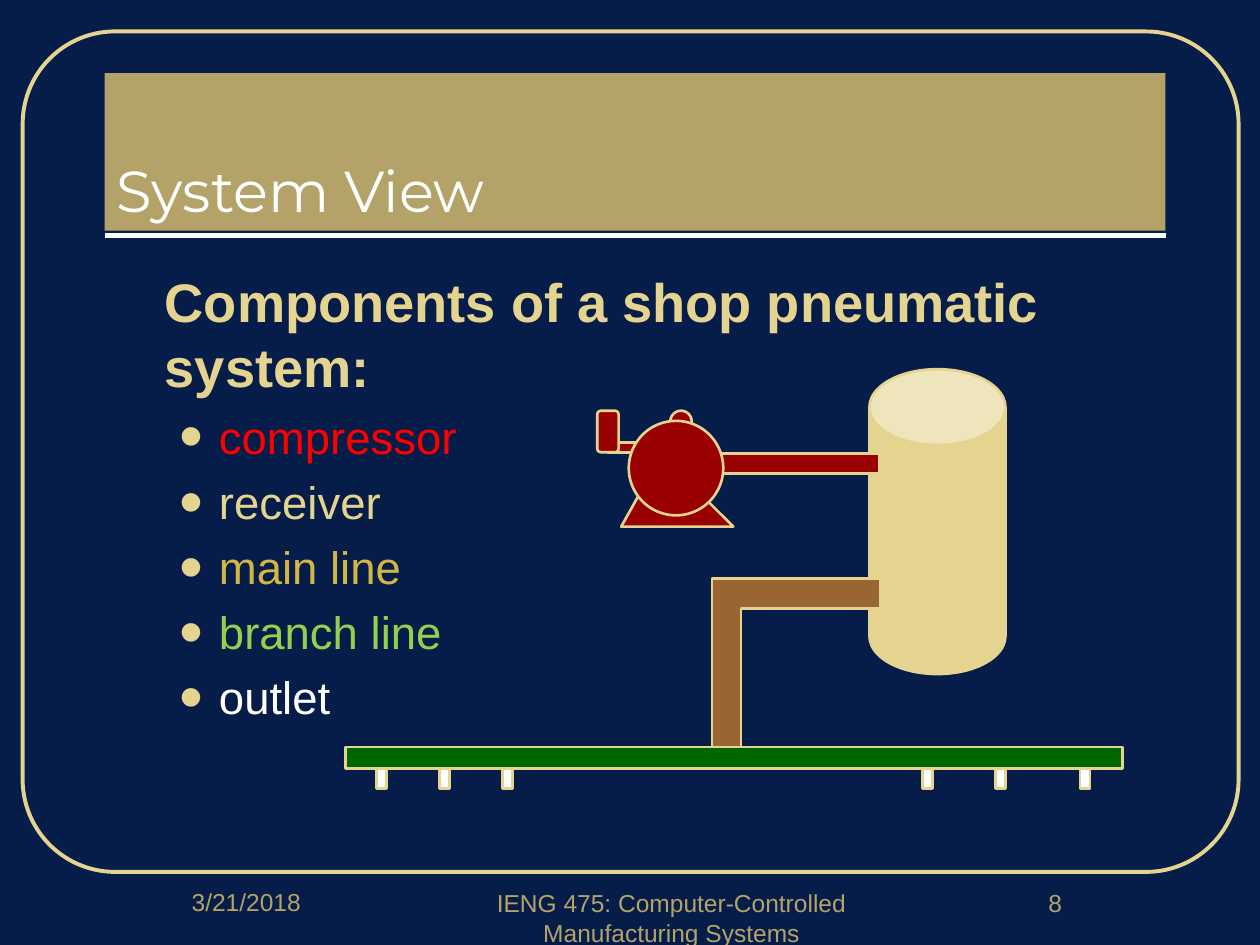
from lxml import etree
from pptx import Presentation
from pptx.dml.color import RGBColor
from pptx.enum.shapes import MSO_CONNECTOR, MSO_SHAPE
from pptx.enum.text import MSO_ANCHOR, PP_ALIGN
from pptx.oxml.ns import qn
from pptx.util import Inches, Pt

RECT, ROUND = MSO_SHAPE.RECTANGLE, MSO_SHAPE.ROUNDED_RECTANGLE
OVAL, CAN = MSO_SHAPE.OVAL, MSO_SHAPE.CAN
LINE = MSO_CONNECTOR.STRAIGHT
BOTTOM, CENTER, LEFT = MSO_ANCHOR.BOTTOM, PP_ALIGN.CENTER, PP_ALIGN.LEFT

NAVY = RGBColor(0x07, 0x1D, 0x49)
GOLD = RGBColor(0xB3, 0xA3, 0x69)
SAND = RGBColor(0xE4, 0xD4, 0x90)
WHITE = RGBColor(0xFF, 0xFF, 0xFF)
RED = RGBColor(0xFF, 0x00, 0x00)
OCHRE = RGBColor(0xD2, 0xB7, 0x45)
LIME = RGBColor(0x92, 0xD0, 0x50)
MAROON = RGBColor(0x99, 0x00, 0x00)
BROWN = RGBColor(0x99, 0x66, 0x33)
GREEN = RGBColor(0x00, 0x66, 0x00)

prs = Presentation()
prs.slide_width, prs.slide_height = Inches(10), Inches(7.5)
slide = prs.slides.add_slide(prs.slide_layouts[6])
slide.background.fill.solid()
slide.background.fill.fore_color.rgb = NAVY
shapes = slide.shapes


def paint(shape, fill, width=1.5):
    """Fill the shape (None leaves it open) and outline it in sand."""
    shape.shadow.inherit = False
    if fill is None:
        shape.fill.background()
    else:
        shape.fill.solid()
        shape.fill.fore_color.rgb = fill
    shape.line.color.rgb = SAND
    shape.line.width = Pt(width)


def style(para, size, color, name="Arial", bold=False):
    font = para.runs[0].font
    font.size, font.name, font.bold = Pt(size), name, bold
    font.color.rgb = color


# Frame, title band and rule
frame = shapes.add_shape(ROUND, Inches(0.18), Inches(0.25), Inches(9.65), Inches(6.67))
frame.adjustments[0] = 0.11
paint(frame, None, 2.25)

rule = shapes.add_connector(LINE, Inches(0.83), Inches(1.87), Inches(9.25), Inches(1.87))
rule.line.color.rgb = WHITE
rule.line.width = Pt(3)
etree.SubElement(rule._element.spPr, qn("a:effectLst"))

title = shapes.add_shape(RECT, Inches(0.83), Inches(0.58), Inches(8.42), Inches(1.25))
paint(title, GOLD)
title.line.fill.background()
title.text_frame.text = "System View"
title.text_frame.vertical_anchor = BOTTOM
para = title.text_frame.paragraphs[0]
para.alignment = LEFT
style(para, 33, WHITE, "Montserrat")

# Footer
for text, left, top, width in [
    ("3/21/2018", 0.83, 6.99, 2.25),
    ("IENG 475: Computer-Controlled Manufacturing Systems", 3.58, 7, 3.5),
    ("8", 7.5, 7, 1.75),
]:
    box = shapes.add_textbox(Inches(left), Inches(top), Inches(width), Inches(0.5))
    box.text_frame.word_wrap = True
    box.text_frame.text = text
    para = box.text_frame.paragraphs[0]
    para.alignment = CENTER
    style(para, 14, GOLD)

# Component list
parts = [("compressor", RED), ("receiver", SAND), ("main line", OCHRE),
         ("branch line", LIME), ("outlet", WHITE)]
body = shapes.add_textbox(Inches(0.83), Inches(2.08), Inches(8.94), Inches(4.42))
frame = body.text_frame
frame.word_wrap = True
frame.text = "\n".join(["Components of a shop pneumatic system:"] + [text for text, _ in parts])
head, *items = frame.paragraphs
style(head, 31, SAND, bold=True)
head.space_before = Pt(7)
head._p.get_or_add_pPr().set("marL", str(Inches(0.38)))
for para, (_, color) in zip(items, parts):
    style(para, 26, color)
    para.space_before = Pt(6)
    props = para._p.get_or_add_pPr()
    props.set("marL", str(Inches(0.81)))
    props.set("indent", str(Inches(-0.31)))
    tint = etree.SubElement(props, qn("a:buClr"))
    etree.SubElement(tint, qn("a:srgbClr"), val=str(SAND))
    etree.SubElement(props, qn("a:buSzPct"), val="150000")
    etree.SubElement(props, qn("a:buFont"), typeface="Arial")
    etree.SubElement(props, qn("a:buChar"), char="•")

# Pneumatic system, back to front
tank = (CAN, 6.9, 2.93, 1.08, 2.42, SAND, 0.558)
feed = (RECT, 5.65, 3.6, 1.33, 0.16, MAROON, None)
outlets = [(RECT, left, 6.09, 0.08, 0.17, WHITE, None)
           for left in (2.99, 3.49, 3.99, 7.32, 7.9, 8.57)]
main = [(6.99, 4.59), (5.65, 4.59), (5.65, 6.01), (5.88, 6.01), (5.88, 4.83), (6.99, 4.83)]
base = [(5.07, 3.93), (4.93, 4.18), (5.82, 4.18), (5.57, 3.93)]
motor = [
    (OVAL, 5.32, 3.26, 0.17, 0.17, MAROON, None),
    (RECT, 4.82, 3.51, 0.25, 0.08, MAROON, None),
    (OVAL, 4.99, 3.34, 0.75, 0.75, MAROON, None),
    (ROUND, 4.74, 3.26, 0.17, 0.33, MAROON, 0.167),
]
branch = (RECT, 2.74, 5.93, 6.17, 0.17, GREEN, None)

for item in [tank, feed, *outlets, (main, BROWN), (base, MAROON), *motor, branch]:
    if len(item) == 2:
        points, fill = item
        start, *rest = [(Inches(x), Inches(y)) for x, y in points]
        pen = shapes.build_freeform(*start)
        pen.add_line_segments(rest, close=True)
        shape = pen.convert_to_shape()
    else:
        kind, left, top, width, height, fill, adjust = item
        shape = shapes.add_shape(kind, Inches(left), Inches(top), Inches(width), Inches(height))
        if adjust is not None:
            shape.adjustments[0] = adjust
    paint(shape, fill)

prs.save("out.pptx")
